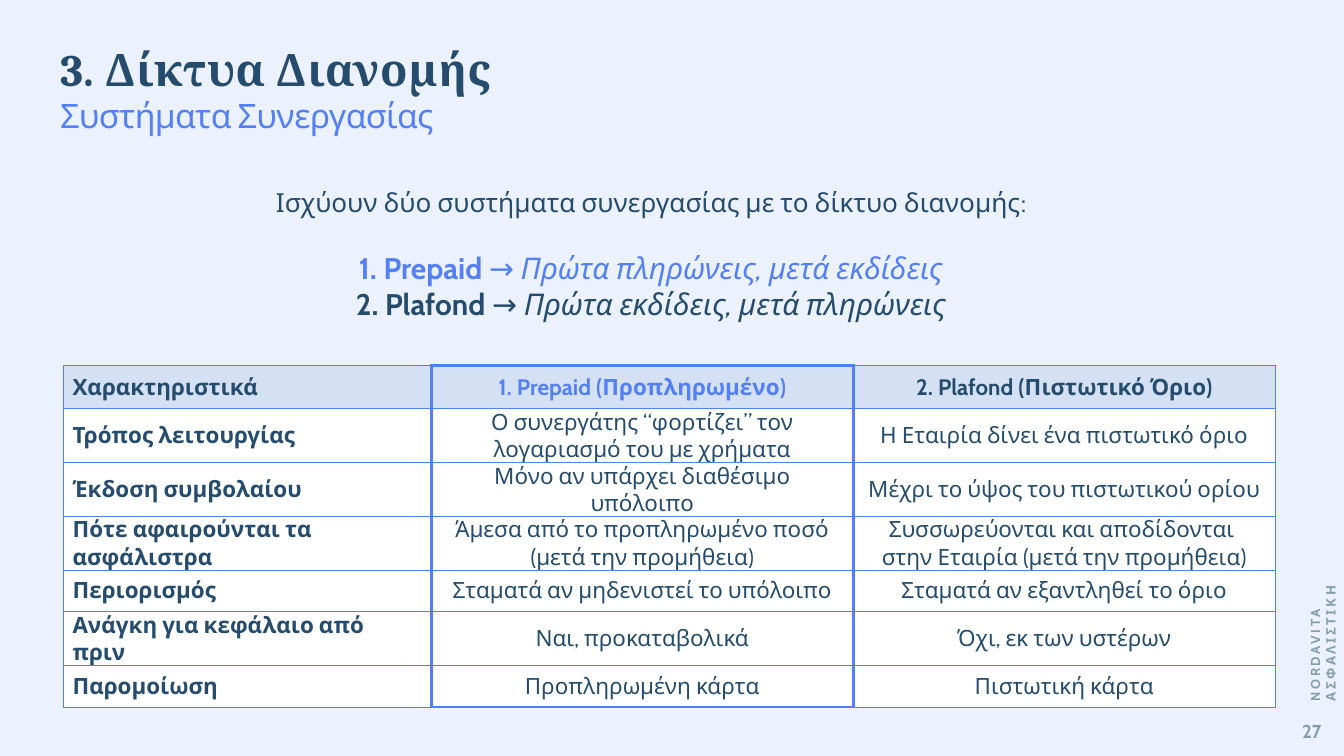
from dataclasses import dataclass

from lxml import etree
from pptx import Presentation
from pptx import util as u
from pptx.dml import color
from pptx.enum import text
from pptx.oxml import ns


@dataclass(frozen=True)
class Theme:
    """Colours, fonts and type sizes of the slide."""
    paper: str = "ECF1FE"
    ink: str = "254C6D"
    accent: str = "5480F7"
    muted: str = "849EAA"
    header: str = "D4E0F3"
    white: str = "FFFFFF"
    serif: str = "Cambria"
    sans: str = "Cabin"
    title: int = 24
    subtitle: int = 18
    system: int = 16
    intro: int = 14
    cell: int = 12
    number: int = 10
    side: int = 7
    thin: float = 0.5
    thick: float = 1.5


THEME = Theme()
ALIGN = text.PP_ALIGN

ROWS = [
    ("Χαρακτηριστικά", "1. Prepaid (Προπληρωμένο)", "2. Plafond (Πιστωτικό Όριο)"),
    ("Τρόπος λειτουργίας", "Ο συνεργάτης “φορτίζει” τον λογαριασμό του με χρήματα",
     "Η Εταιρία δίνει ένα πιστωτικό όριο"),
    ("Έκδοση συμβολαίου", "Μόνο αν υπάρχει διαθέσιμο υπόλοιπο",
     "Μέχρι το ύψος του πιστωτικού ορίου"),
    ("Πότε αφαιρούνται τα ασφάλιστρα",
     "Άμεσα από το προπληρωμένο ποσό\n(μετά την προμήθεια)",
     "Συσσωρεύονται και αποδίδονται \nστην Εταιρία (μετά την προμήθεια)"),
    ("Περιορισμός", "Σταματά αν μηδενιστεί το υπόλοιπο", "Σταματά αν εξαντληθεί το όριο"),
    ("Ανάγκη για κεφάλαιο από πριν", "Ναι, προκαταβολικά", "Όχι, εκ των υστέρων"),
    ("Παρομοίωση", "Προπληρωμένη κάρτα", "Πιστωτική κάρτα"),
]
COLUMN_WIDTHS = [2.74, 3.14, 3.14]
ROW_HEIGHTS = [0.32, 0.39, 0.4, 0.4, 0.31, 0.4, 0.31]
SYSTEMS = [
    ("1. Prepaid ", "Πρώτα πληρώνεις, μετά εκδίδεις", THEME.accent),
    ("2. Plafond ", "Πρώτα εκδίδεις, μετά πληρώνεις", THEME.ink),
]


class SlideBuilder:
    """Adds styled elements to the current slide."""

    def __init__(self, page, theme):
        self.page = page
        self.theme = theme
        page.background.fill.solid()
        page.background.fill.fore_color.rgb = color.RGBColor.from_string(theme.paper)

    def font(self, target, size=None, ink=None, name=None, bold=None, italic=None):
        font = target.font
        font.bold, font.italic = bold, italic
        if size:
            font.size = u.Pt(size)
            font.name = name or self.theme.sans
        if ink:
            font.color.rgb = color.RGBColor.from_string(ink)

    def box(self, left, top, width, height, rotation=0):
        box = self.page.shapes.add_textbox(*map(u.Inches, (left, top, width, height)))
        box.rotation = rotation
        box.text_frame.word_wrap = True
        return box.text_frame

    def span(self, para, words, spacing=None, **style):
        span = para.add_run()
        span.text = words
        self.font(span, **style)
        if spacing is not None:
            span._r.get_or_add_rPr().set("spc", str(round(spacing * 100)))

    def heading(self, title, subtitle):
        frame = self.box(0.35, 0.21, 9.21, 0.71)
        frame.margin_top = frame.margin_bottom = u.Inches(0.1)
        para = frame.paragraphs[0]
        self.span(para, title, 0.2, size=self.theme.title, ink=self.theme.ink,
                  name=self.theme.serif, bold=True)
        para.add_line_break()
        self.span(para, subtitle, -0.3, size=self.theme.subtitle, ink=self.theme.accent)

    def summary(self, intro, systems):
        frame = self.box(0.36, 1.34, 8.97, 1.11)
        para = frame.paragraphs[0]
        para.text = intro
        para.alignment = ALIGN.CENTER
        self.font(para, self.theme.intro, self.theme.ink)
        for index, (label, motto, ink) in enumerate(systems):
            para = frame.add_paragraph()
            para.alignment = ALIGN.CENTER
            para.space_before = u.Pt(0 if index else 17)
            style = {"size": self.theme.system, "ink": ink}
            self.span(para, label, bold=True, **style)
            self.span(para, "→ ", **style)
            self.span(para, motto, italic=True, **style)

    def label(self, words, place, size, align, rotation=0, spacing=None):
        para = self.box(*place, rotation=rotation).paragraphs[0]
        para.alignment = align
        self.span(para, words, spacing, size=size, ink=self.theme.muted, bold=True)

    def borders(self, cell, thick_sides):
        properties = cell._tc.get_or_add_tcPr()
        for index, side in enumerate("LRTB"):
            weight = self.theme.thick if side in thick_sides else self.theme.thin
            line = etree.Element(ns.qn(f"a:ln{side}"), w=str(u.Pt(weight)))
            fill = etree.SubElement(line, ns.qn("a:solidFill"))
            etree.SubElement(fill, ns.qn("a:srgbClr"), val=self.theme.accent)
            properties.insert(index, line)

    def cell(self, cell, words, fill, ink, bold, align):
        cell.fill.solid()
        cell.fill.fore_color.rgb = color.RGBColor.from_string(fill)
        cell.vertical_anchor = text.MSO_ANCHOR.MIDDLE
        cell.margin_left = cell.margin_right = u.Inches(0.07)
        cell.margin_top = cell.margin_bottom = 0
        cell.text = words
        for para in cell.text_frame.paragraphs:
            para.alignment = align
            self.font(para, self.theme.cell, ink, bold=bold)

    def table(self, rows, widths, heights, left, top):
        frame = self.page.shapes.add_table(
            len(rows), len(widths), u.Inches(left), u.Inches(top),
            u.Inches(sum(widths)), u.Inches(sum(heights)))
        table = frame.table
        table.first_row = table.horz_banding = False
        for column, width in zip(table.columns, widths):
            column.width = u.Inches(width)
        for row, height in zip(table.rows, heights):
            row.height = u.Inches(height)
        for r, row in enumerate(rows):
            for c, words in enumerate(row):
                cell = table.cell(r, c)
                head = r == 0
                self.cell(cell, words,
                          self.theme.header if head else self.theme.white,
                          self.theme.accent if head and c == 1 else self.theme.ink,
                          head or c == 0, ALIGN.CENTER if c else ALIGN.LEFT)
                thick = ("R", "LR", "L")[c]
                if c == 1:
                    thick += {0: "T", len(rows) - 1: "B"}.get(r, "")
                self.borders(cell, thick)


def main():
    deck = Presentation()
    deck.slide_width, deck.slide_height = u.Inches(10), u.Inches(10 * 9 / 16)
    slide = SlideBuilder(deck.slides.add_slide(deck.slide_layouts[6]), THEME)
    slide.heading("3. Δίκτυα Διανομής", "Συστήματα Συνεργασίας")
    slide.summary("Ισχύουν δύο συστήματα συνεργασίας με το δίκτυο διανομής:", SYSTEMS)
    slide.table(ROWS, COLUMN_WIDTHS, ROW_HEIGHTS, 0.47, 2.72)
    slide.label("27", (9.41, 5.31, 0.52, 0.27), THEME.number, ALIGN.RIGHT)
    slide.label("NORDAVITA ΑΣΦΑΛΙΣΤΙΚΗ", (8.93, 4.35, 1.71, 0.22), THEME.side,
                ALIGN.LEFT, rotation=270, spacing=1.4)
    deck.save("out.pptx")


if __name__ == "__main__":
    main()
